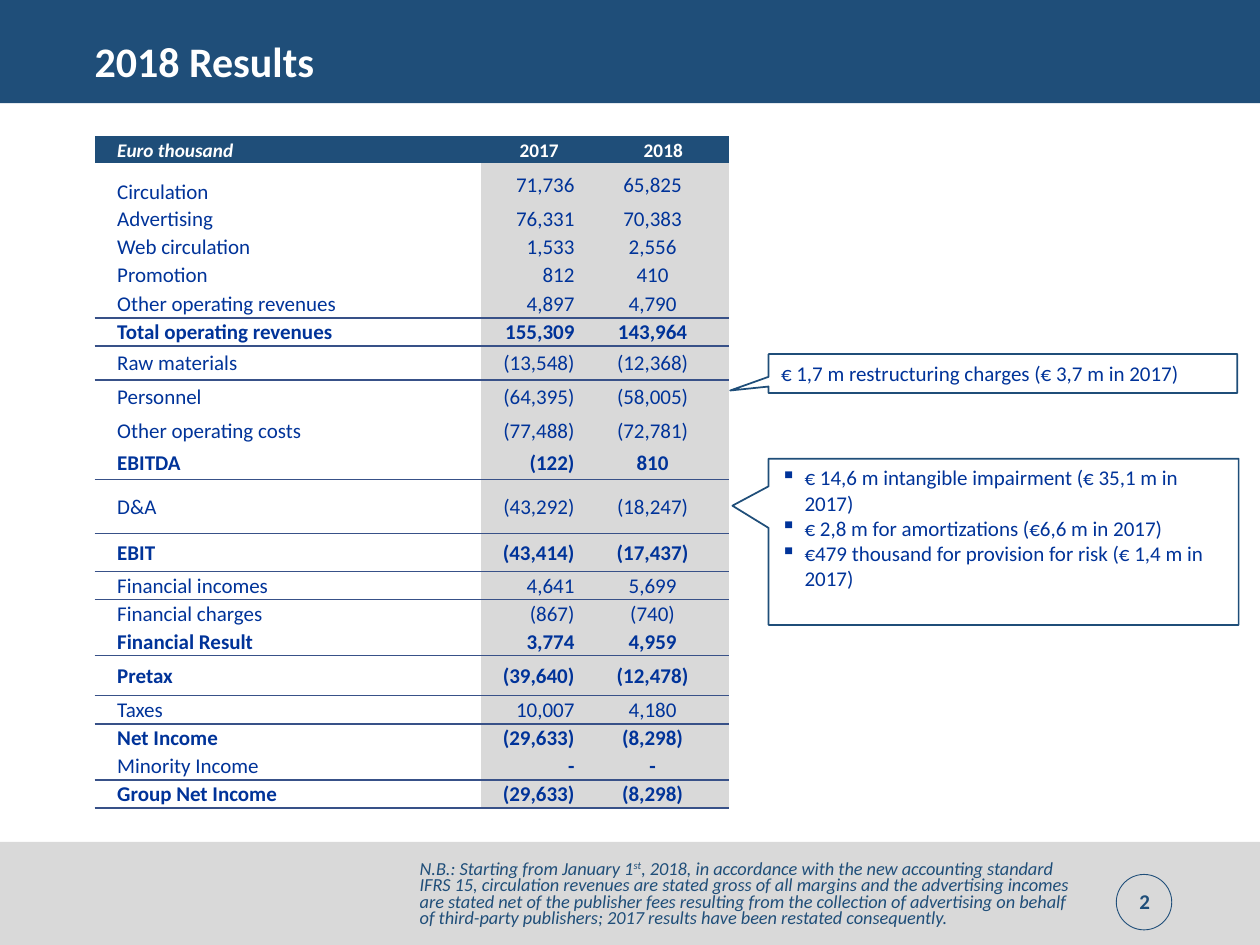
from dataclasses import dataclass
from lxml.etree import SubElement
from pptx import Presentation
from pptx.dml.color import RGBColor
from pptx.enum.shapes import MSO_SHAPE
from pptx.enum.text import MSO_ANCHOR, PP_ALIGN
from pptx.oxml import parse_xml
from pptx.oxml.ns import nsdecls, qn
from pptx.util import Pt


@dataclass
class Theme:
    navy = RGBColor.from_string("1F4E79")
    ink = RGBColor.from_string("003399")
    grey = RGBColor.from_string("D9D9D9")
    white = RGBColor.from_string("FFFFFF")
    rule = "385188"
    face = "Calibri"
    title = 24
    body = 12
    head = 11
    note = 10.5


look = Theme()


def add_run(para, text, size, color, bold=False, italic=False):
    run = para.add_run()
    run.text = text
    font = run.font
    font.name, font.size, font.color.rgb = look.face, Pt(size), color
    font.bold, font.italic = bold, italic
    return run


def add_box(kind, place, fill=None, line=None, width=1):
    box = slide.shapes.add_shape(kind, *map(Pt, place))
    box.shadow.inherit = False
    if fill is None:
        box.fill.background()
    else:
        box.fill.solid()
        box.fill.fore_color.rgb = fill
    if line is None:
        box.line.fill.background()
    else:
        box.line.color.rgb = line
        box.line.width = Pt(width)
    return box


deck = Presentation()
deck.slide_width, deck.slide_height = Pt(720), Pt(540)
slide = deck.slides.add_slide(deck.slide_layouts[5])

# Bands and page number ring
add_box(MSO_SHAPE.RECTANGLE, (0, 481, 720, 59), look.grey)
add_box(MSO_SHAPE.RECTANGLE, (0, 0, 720, 59), look.navy)
ring = (637.9, 499.7, 31.7, 31.7)
add_box(MSO_SHAPE.FLOWCHART_CONNECTOR, ring, None, look.navy, 0.5)

# Title, brought in front of its band
title = slide.shapes.title
title.left, title.top, title.width, title.height = map(Pt, (46.8, 14.4, 620.6, 44.6))
slide.shapes._spTree.append(title._element)
title.text_frame.vertical_anchor = MSO_ANCHOR.MIDDLE
para = title.text_frame.paragraphs[0]
para.alignment, para.line_spacing = PP_ALIGN.LEFT, 0.9
add_run(para, "2018 Results", look.title, look.white, True)

# Page number
page = slide.shapes.add_textbox(*map(Pt, (637.9, 500.4, 32.4, 28.8))).text_frame
page.word_wrap = True
page.vertical_anchor = MSO_ANCHOR.MIDDLE
page.paragraphs[0].alignment = PP_ALIGN.CENTER
add_run(page.paragraphs[0], "2", look.body, look.navy, True)

# Results table: label, 2017, 2018, row height, style (b = bold, u = rule below)
rows = [
    ("Euro thousand", "2017", "2018", 15.6, "b"),
    ("Circulation", "71,736", "65,825", 23.8, ""),
    ("Advertising", "76,331", "70,383", 16, ""),
    ("Web circulation", "1,533", "2,556", 16, ""),
    ("Promotion", "812", "410", 16, ""),
    ("Other operating revenues", "4,897", "4,790", 16.5, "u"),
    ("Total operating revenues", "155,309", "143,964", 16.2, "bu"),
    ("Raw materials", "(13,548)", "(12,368)", 19.4, ""),
    ("Personnel", "(64,395)", "(58,005)", 19.2, ""),
    ("Other operating costs", "(77,488)", "(72,781)", 19, ""),
    ("EBITDA", "(122)", "810", 18.6, "bu"),
    ("D&A", "(43,292)", "(18,247)", 31, "u"),
    ("EBIT", "(43,414)", "(17,437)", 21.6, "bu"),
    ("Financial incomes", "4,641", "5,699", 16, ""),
    ("Financial charges", "(867)", "(740)", 16, ""),
    ("Financial Result", "3,774", "4,959", 16, "bu"),
    ("Pretax", "(39,640)", "(12,478)", 23, "bu"),
    ("Taxes", "10,007", "4,180", 16.2, ""),
    ("Net Income", "(29,633)", "(8,298)", 16, "b"),
    ("Minority Income", "-", "-", 16, "u"),
    ("Group Net Income", "(29,633)", "(8,298)", 16, "bu"),
]
high = sum(row[3] for row in rows)
frame = slide.shapes.add_table(len(rows), 3, *map(Pt, (54, 77.8, 362.9, high)))
table = frame.table
table.first_row = table.horz_banding = False
# Style without fills or grid
table._tbl.tblPr.find(qn("a:tableStyleId")).text = "{2D5ABB26-0587-4C30-8999-92F81FD0307C}"
for col, wide in zip(table.columns, (221, 66.3, 75.6)):
    col.width = Pt(wide)
aligns = (PP_ALIGN.LEFT, PP_ALIGN.RIGHT, PP_ALIGN.CENTER)
for i, (*texts, tall, style) in enumerate(rows):
    table.rows[i].height = Pt(tall)
    head = i == 0
    for j, text in enumerate(texts):
        cell = table.cell(i, j)
        cell.margin_left = Pt(0.7 if j else 13)
        cell.margin_right = Pt(13 if j and not head else 0.7)
        cell.margin_top, cell.margin_bottom = Pt(0.7), Pt(0)
        low = text == "Circulation"
        cell.vertical_anchor = MSO_ANCHOR.BOTTOM if low else MSO_ANCHOR.MIDDLE
        cell.fill.solid()
        cell.fill.fore_color.rgb = look.navy if head else look.grey if j else look.white
        para = cell.text_frame.paragraphs[0]
        para.alignment = PP_ALIGN.CENTER if head and j else aligns[j]
        add_run(para, text, look.head if head else look.body,
                look.white if head else look.ink,
                "b" in style or text == "-", head and j == 0)
        # Rules: below this row, and above it when the row before has one
        sides = [("lnT", i and "u" in rows[i - 1][4]), ("lnB", "u" in style)]
        lines = [side for side, on in sides if on]
        for k, side in enumerate(lines):
            cell._tc.get_or_add_tcPr().insert(k, parse_xml(
                f'<a:{side} {nsdecls("a")} w="12700"><a:solidFill>'
                f'<a:srgbClr val="{look.rule}"/></a:solidFill></a:{side}>'))

# Callouts
calls = [
    ((439.2, 262.1, 268.6, 95), (-0.577, -0.217), True, [
        "€ 14,6 m intangible impairment (€ 35,1 m in 2017)",
        "€ 2,8 m for amortizations (€6,6 m in 2017)",
        "€479 thousand for provision for risk (€ 1,4 m in 2017)"]),
    ((439.2, 202.3, 267.8, 22.3), (-0.582, 0.435), False, [
        "€ 1,7 m restructuring charges (€ 3,7 m in 2017)"]),
]
for place, tip, listed, texts in calls:
    call = add_box(MSO_SHAPE.RECTANGULAR_CALLOUT, place, look.white, look.navy)
    call.adjustments[0], call.adjustments[1] = tip
    text_box = call.text_frame
    text_box.word_wrap = True
    text_box.vertical_anchor = MSO_ANCHOR.TOP
    for i, text in enumerate(texts):
        para = text_box.add_paragraph() if i else text_box.paragraphs[0]
        para.alignment = PP_ALIGN.LEFT
        if listed:
            prop = para._p.get_or_add_pPr()
            prop.set("marL", str(Pt(13.5)))
            prop.set("indent", str(-Pt(13.5)))
            SubElement(prop, qn("a:buChar")).set("char", "▪")
        add_run(para, text, look.body, look.ink)

# Footnote
note = slide.shapes.add_textbox(*map(Pt, (239.8, 492.5, 382.3, 38.2))).text_frame
note.word_wrap = True
note.margin_left = note.margin_top = note.margin_bottom = 0
para = note.paragraphs[0]
para.line_spacing = 0.75
parts = [
    "N.B.: Starting from January 1",
    "st",
    ", 2018, in accordance with the new accounting standard IFRS 15, circulation "
    "revenues are stated gross of all margins and the advertising incomes are stated "
    "net of the publisher fees resulting from the collection of advertising on behalf "
    "of third-party publishers; 2017 results have been restated consequently.",
]
for part in parts:
    run = add_run(para, part, look.note, look.navy, italic=True)
    if part == "st":
        run.font._element.set("baseline", "30000")

deck.save("out.pptx")
